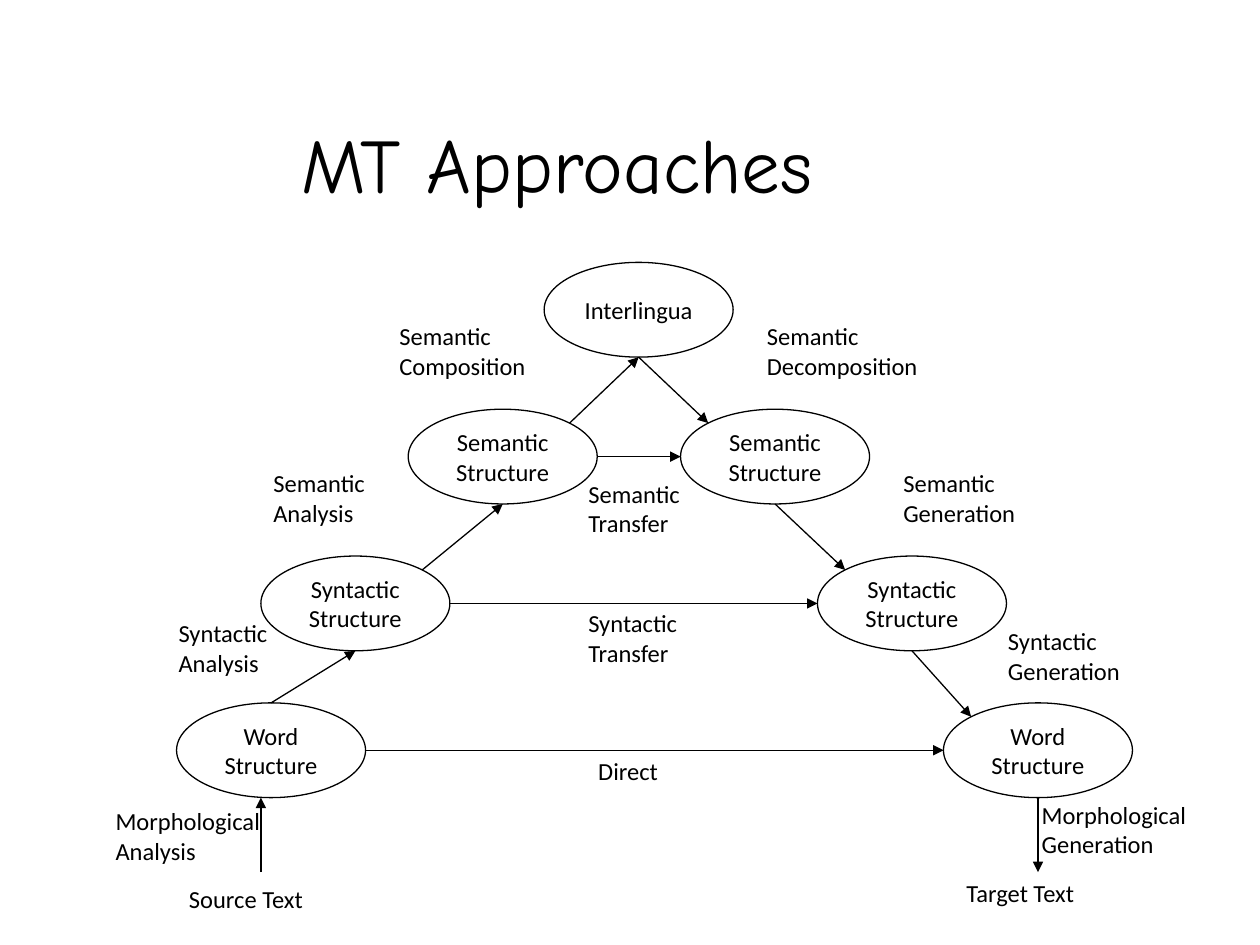
from dataclasses import dataclass
from math import cos, radians, sin

from lxml import etree
from pptx import Presentation
from pptx.dml.color import RGBColor
from pptx.enum.shapes import MSO_CONNECTOR, MSO_SHAPE
from pptx.enum.text import MSO_ANCHOR, PP_ALIGN
from pptx.oxml.ns import qn
from pptx.util import Cm, Pt

OVAL = MSO_SHAPE.OVAL
STRAIGHT = MSO_CONNECTOR.STRAIGHT
LEFT, CENTER = PP_ALIGN.LEFT, PP_ALIGN.CENTER
TOP, MIDDLE = MSO_ANCHOR.TOP, MSO_ANCHOR.MIDDLE


@dataclass(frozen=True)
class Theme:
    ink: RGBColor = RGBColor(0, 0, 0)
    paper: RGBColor = RGBColor(255, 255, 255)
    title_font: str = "Comic Neue"
    body_font: str = "Calibri"
    title_size: int = 44
    body_size: int = 14
    line_width: float = 0.75


THEME = Theme()

# Stages, all in cm from the corner of the pyramid box
NODE_W, NODE_H, ROW_PITCH = 3.81, 1.91, 2.96
NODES = {  # key: (left, row, text)
    "interlingua": (8.89, 0, "Interlingua"),
    "semantic source": (6.15, 1, "Semantic\nStructure"),
    "semantic target": (11.64, 1, "Semantic\nStructure"),
    "syntactic source": (3.18, 2, "Syntactic\nStructure"),
    "syntactic target": (14.4, 2, "Syntactic\nStructure"),
    "word source": (1.48, 3, "Word\nStructure"),
    "word target": (16.94, 3, "Word\nStructure"),
}

# Connection sites of an oval run anticlockwise from the top in steps of 45°
N, NW, W, S, E, NE = 0, 1, 2, 4, 6, 7
ARROWS = [
    ("word source", N, "syntactic source", S),
    ("syntactic source", NE, "semantic source", S),
    ("semantic source", NE, "interlingua", S),
    ("interlingua", S, "semantic target", NW),
    ("semantic target", S, "syntactic target", NW),
    ("syntactic target", S, "word target", NW),
    ("semantic source", E, "semantic target", W),
    ("syntactic source", E, "syntactic target", W),
    ("word source", E, "word target", W),
]
TEXT_ARROW_Y = 12.29  # outer end of the arrows from and to the texts
SOURCE_ARROW_X = 3.18

LABELS = [  # left, top, width, text
    (1.48, 12.41, 3.38, "Source Text"),
    (17.15, 12.29, 3.38, "Target Text"),
    (5.72, 1.06, 3.81, "Semantic\nComposition"),
    (13.13, 1.06, 4.45, "Semantic\nDecomposition"),
    (3.18, 4.03, 3.81, "Semantic\nAnalysis"),
    (15.88, 4.03, 4.45, "Semantic\nGeneration"),
    (1.27, 7.05, 3.81, "Syntactic\nAnalysis"),
    (17.99, 7.21, 3.81, "Syntactic\nGeneration"),
    (0, 10.84, 4.45, "Morphological\nAnalysis"),
    (18.67, 10.71, 4.45, "Morphological\nGeneration"),
    (9.53, 4.24, 2.74, "Semantic\nTransfer"),
    (9.53, 6.85, 2.74, "Syntactic\nTransfer"),
    (9.73, 9.82, 2.54, "Direct"),
]


def write(s, text, font=THEME.body_font, size=THEME.body_size,
          align=LEFT, anchor=TOP, wrap=True):
    """Fill a shape with one paragraph per line of text."""
    tf = s.text_frame
    tf.word_wrap = wrap
    tf.vertical_anchor = anchor
    for i, line in enumerate(text.split("\n")):
        p = tf.paragraphs[0] if i == 0 else tf.add_paragraph()
        p.alignment = align
        r = p.add_run()
        r.text = line
        r.font.name = font
        r.font.size = Pt(size)
        r.font.color.rgb = THEME.ink


def add_node(slide, x, y, text):
    s = slide.shapes.add_shape(OVAL, Cm(x), Cm(y), Cm(NODE_W), Cm(NODE_H))
    s.shadow.inherit = False
    s.fill.solid()
    s.fill.fore_color.rgb = THEME.paper
    s.line.color.rgb = THEME.ink
    s.line.width = Pt(THEME.line_width)
    write(s, text, align=CENTER, anchor=MIDDLE, wrap=False)
    return s


def site_point(s, site):
    """Position of a connection site on an oval's outline."""
    angle = radians(90 + 45 * site)
    return (round(s.left + s.width / 2 * (1 + cos(angle))),
            round(s.top + s.height / 2 * (1 - sin(angle))))


def add_arrow(slide, start, end):
    c = slide.shapes.add_connector(STRAIGHT, *start, *end)
    c.line.color.rgb = THEME.ink
    c.line.width = Pt(THEME.line_width)
    etree.SubElement(c.line._get_or_add_ln(), qn("a:tailEnd"), type="triangle")
    etree.SubElement(c._element.spPr, qn("a:effectLst"))
    return c


def glue(c, begin=None, end=None):
    """Join a connector to (oval, site) pairs; ovals have eight sites."""
    props = c._element.nvCxnSpPr.cNvCxnSpPr
    for joint, get_link in ((begin, props.get_or_add_stCxn),
                            (end, props.get_or_add_endCxn)):
        if joint:
            link = get_link()
            link.id, link.idx = joint[0].shape_id, joint[1]


def add_title(slide, x, y, w, h):
    s = slide.shapes.add_textbox(Cm(x), Cm(y), Cm(w), Cm(h))
    write(s, "MT Approaches", font=THEME.title_font, size=THEME.title_size,
          align=CENTER, anchor=MIDDLE)


def add_pyramid(slide, x, y):
    # Stages
    nodes = {key: add_node(slide, x + left, y + row * ROW_PITCH, text)
             for key, (left, row, text) in NODES.items()}

    # Labels
    for left, top, width, text in LABELS:
        height = 1.45 if "\n" in text else 0.85
        s = slide.shapes.add_textbox(Cm(x + left), Cm(y + top),
                                     Cm(width), Cm(height))
        write(s, text)

    # Arrows between stages
    for a, a_site, b, b_site in ARROWS:
        begin, end = (nodes[a], a_site), (nodes[b], b_site)
        c = add_arrow(slide, site_point(*begin), site_point(*end))
        glue(c, begin, end)

    # Arrows from the source text and to the target text
    source, target = nodes["word source"], nodes["word target"]
    source_x, outer_y = Cm(x + SOURCE_ARROW_X), Cm(y + TEXT_ARROW_Y)
    add_arrow(slide, (source_x, outer_y),
              (source_x, source.top + source.height))
    bottom = site_point(target, S)
    c = add_arrow(slide, bottom, (bottom[0], outer_y))
    glue(c, begin=(target, S))


def main():
    prs = Presentation()
    prs.slide_width, prs.slide_height = Cm(25.4), Cm(19.05)
    slide = prs.slides.add_slide(prs.slide_layouts[6])
    add_title(slide, 0.43, 1.7, 21.59, 3.18)
    add_pyramid(slide, 2.08, 5.29)
    prs.save("out.pptx")


if __name__ == "__main__":
    main()
